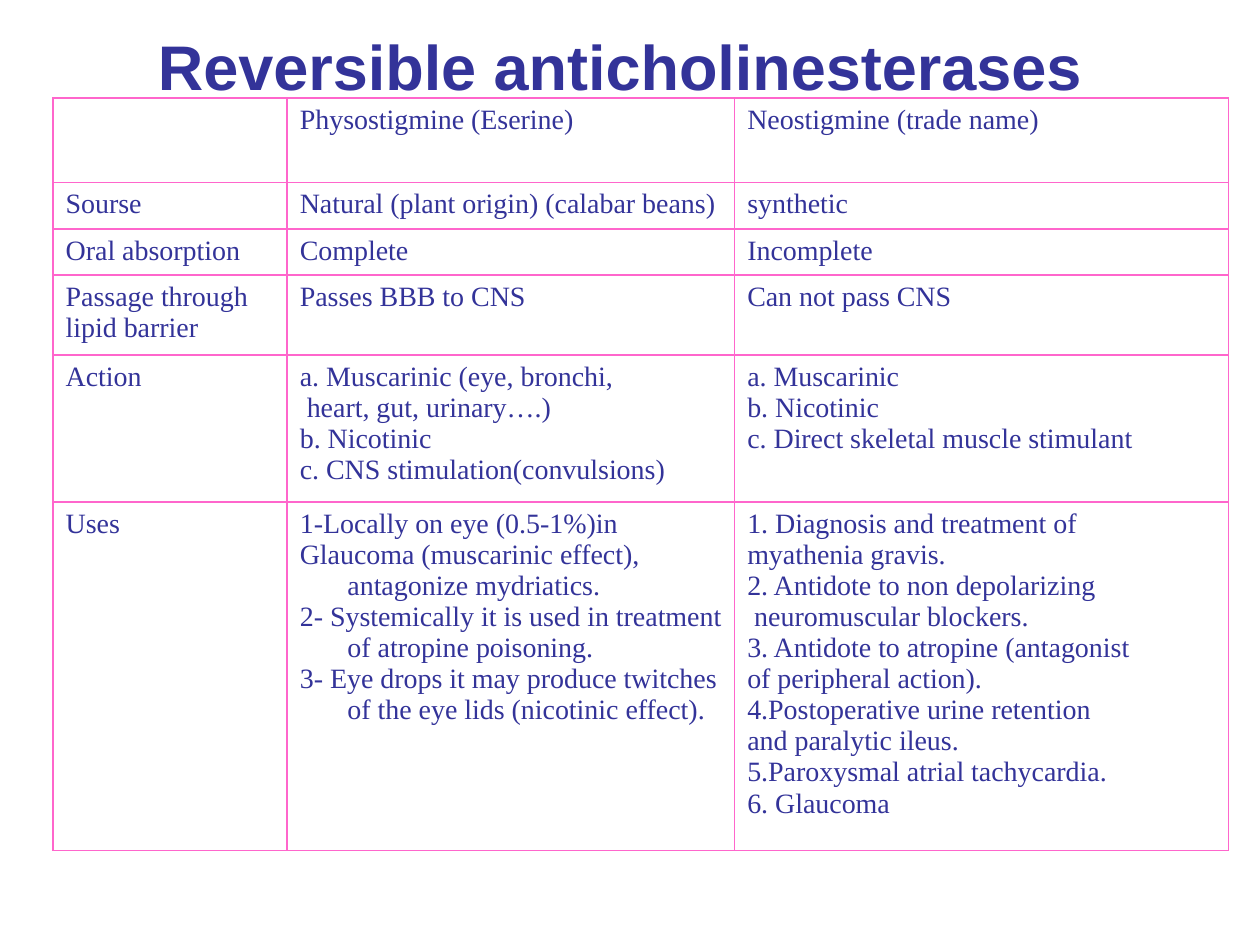
from lxml.etree import SubElement
from pptx import Presentation
from pptx.dml.color import RGBColor
from pptx.enum.text import MSO_ANCHOR, PP_ALIGN
from pptx.oxml.ns import qn
from pptx.util import Cm, Pt

COLORS = {"text": "333399", "border": "FF66CC", "background": "FFFFFF"}
COLUMN_WIDTHS = [4.72, 9.02, 9.96]
ROW_HEIGHTS = [1.7, 0.64, 0.84, 1.45, 2.44, 5.13]
COLUMN_ALIGNMENTS = [PP_ALIGN.JUSTIFY, PP_ALIGN.LEFT, PP_ALIGN.JUSTIFY]
HANGING_INDENT = Cm(0.96)
COMPARISON = [
    ["", "Physostigmine (Eserine)", "Neostigmine (trade name)"],
    ["Sourse", "Natural (plant origin) (calabar beans)", "synthetic"],
    ["Oral absorption", "Complete", "Incomplete"],
    ["Passage through\nlipid barrier", "Passes BBB to CNS", "Can not pass CNS"],
    [
        "Action",
        "a. Muscarinic (eye, bronchi,\n"
        " heart, gut, urinary….)\n"
        "b. Nicotinic\n"
        "c. CNS stimulation(convulsions)",
        "a. Muscarinic\n"
        "b. Nicotinic\n"
        "c. Direct skeletal muscle stimulant",
    ],
    [
        "Uses",
        "1-Locally on eye (0.5-1%)in\n"
        "Glaucoma (muscarinic effect), antagonize mydriatics.\n"
        "2- Systemically it is used in treatment of atropine poisoning.\n"
        "3- Eye drops it may produce twitches of the eye lids (nicotinic effect).",
        "1. Diagnosis and treatment of\n"
        "myathenia gravis.\n"
        "2. Antidote to non depolarizing \n"
        " neuromuscular blockers.\n"
        "3. Antidote to atropine (antagonist\n"
        "of peripheral action).\n"
        "4.Postoperative urine retention \n"
        "and paralytic ileus.\n"
        "5.Paroxysmal atrial tachycardia.\n"
        "6. Glaucoma",
    ],
]


def style_font(font, name, size, bold=False):
    font.name = name
    font.size = Pt(size)
    font.bold = bold
    font.color.rgb = RGBColor.from_string(COLORS["text"])


def add_title(slide, wording):
    title = slide.shapes.add_textbox(Cm(1.07), Cm(0.43), Cm(22.86), Cm(1.78))
    frame = title.text_frame
    frame.word_wrap = True
    frame.vertical_anchor = MSO_ANCHOR.MIDDLE
    frame.text = wording
    heading = frame.paragraphs[0]
    heading.alignment = PP_ALIGN.CENTER
    style_font(heading.runs[0].font, "Arial", 36, bold=True)


def add_borders(cell):
    properties = cell._tc.get_or_add_tcPr()
    for position, side in enumerate(("lnL", "lnR", "lnT", "lnB")):
        border = SubElement(properties, qn(f"a:{side}"), w=str(Pt(1)))
        properties.insert(position, border)
        fill = SubElement(border, qn("a:solidFill"))
        SubElement(fill, qn("a:srgbClr"), val=COLORS["border"])


def fill_cell(cell, wording, alignment):
    cell.fill.background()
    add_borders(cell)
    cell.text_frame.text = wording
    for line in cell.text_frame.paragraphs:
        line.alignment = alignment
        indents = line._p.get_or_add_pPr()
        indents.set("marL", str(HANGING_INDENT))
        indents.set("indent", str(-HANGING_INDENT))
        for run in line.runs:
            style_font(run.font, "Times New Roman", 16)


def add_comparison(slide):
    comparison = slide.shapes.add_table(
        len(ROW_HEIGHTS), len(COLUMN_WIDTHS), Cm(1.07), Cm(1.98),
        Cm(sum(COLUMN_WIDTHS)), Cm(sum(ROW_HEIGHTS)),
    ).table
    comparison.first_row = False
    comparison.horz_banding = False
    for column, width in zip(comparison.columns, COLUMN_WIDTHS):
        column.width = Cm(width)
    for row, height, wordings in zip(comparison.rows, ROW_HEIGHTS, COMPARISON):
        row.height = Cm(height)
        for cell, wording, alignment in zip(row.cells, wordings, COLUMN_ALIGNMENTS):
            fill_cell(cell, wording, alignment)


def main():
    """Build the slide comparing two reversible anticholinesterases."""
    deck = Presentation()
    deck.slide_width, deck.slide_height = Cm(25.4), Cm(19.05)
    slide = deck.slides.add_slide(deck.slide_layouts[6])
    backdrop = slide.background.fill
    backdrop.solid()
    backdrop.fore_color.rgb = RGBColor.from_string(COLORS["background"])
    add_title(slide, "Reversible anticholinesterases")
    add_comparison(slide)
    deck.save("out.pptx")


if __name__ == "__main__":
    main()
